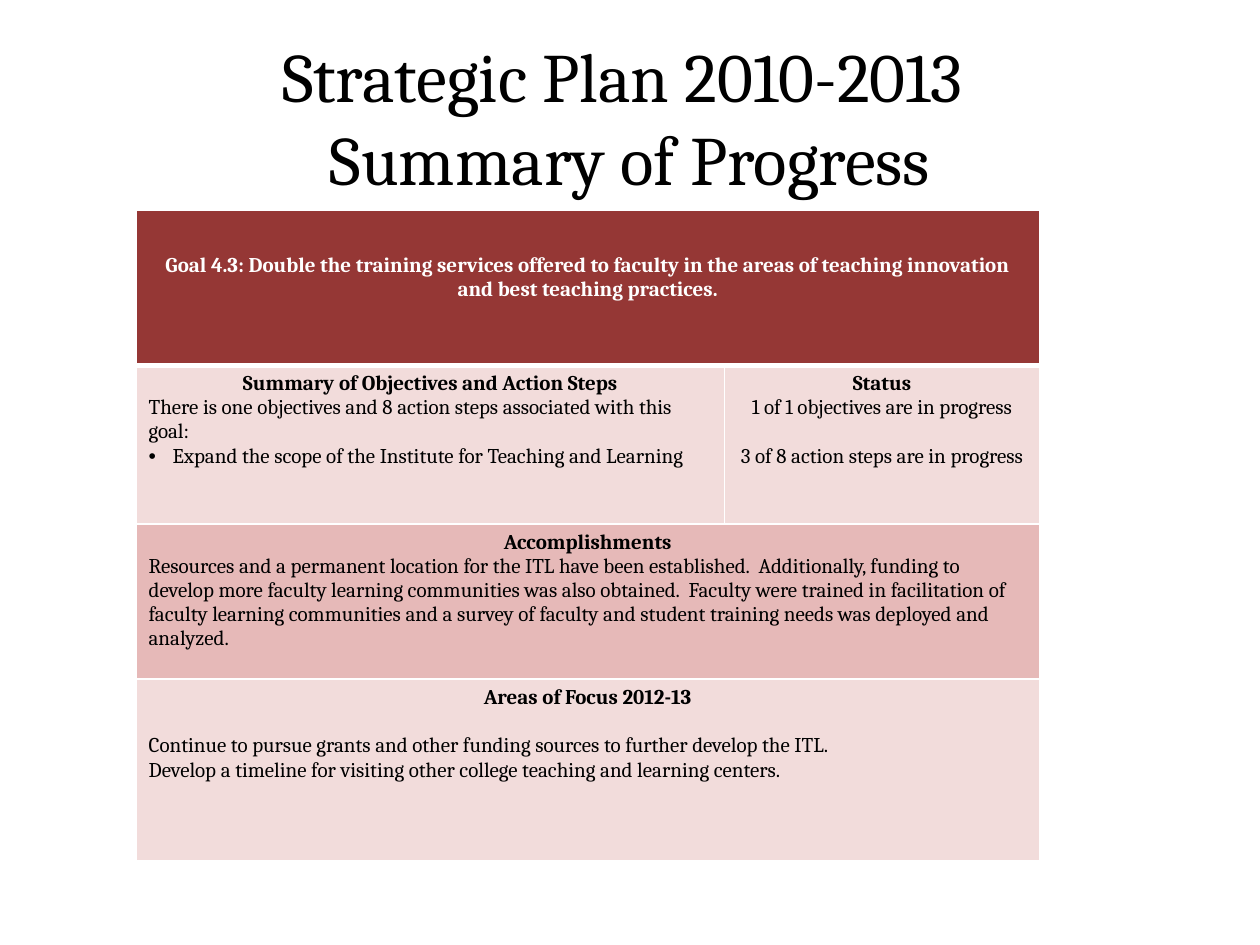
from dataclasses import dataclass

from lxml.etree import SubElement
from pptx import Presentation
from pptx.dml.color import RGBColor
from pptx.enum.text import MSO_ANCHOR, MSO_AUTO_SIZE, PP_ALIGN
from pptx.oxml import parse_xml
from pptx.oxml.ns import nsdecls, qn
from pptx.util import Inches, Pt


@dataclass(frozen=True)
class Theme:
    font: str = "Cambria"
    title_size: float = 39.6
    body_size: float = 12
    gap: float = 14
    ink: str = "000000"
    white: str = "FFFFFF"
    goal: str = "953735"
    pale: str = "F2DCDB"
    rose: str = "E6B9B8"
    rule: float = 1
    goal_rule: float = 3


@dataclass(frozen=True)
class Line:
    text: str
    heading: bool = False
    centered: bool = False
    bullet: bool = False
    gap: bool = False


@dataclass(frozen=True)
class Panel:
    row: int
    column: int
    span: int
    fill: str
    lines: tuple[Line, ...]
    ink: str = "000000"
    top_margin: float = 0.05
    bottom_rule: float = 1


THEME = Theme()
COLUMNS = (4.67, 2.5)
ROWS = (1.23, 1.26, 1.23, 1.44)
BULLET_INDENT = 0.19


def heading(text: str) -> Line:
    return Line(text, heading=True, centered=True)


PANELS = (
    Panel(0, 0, 2, THEME.goal, (
        heading("Goal 4.3: Double the training services offered to faculty in the areas "
                "of teaching innovation and best teaching practices."),
    ), ink=THEME.white, top_margin=0.34, bottom_rule=THEME.goal_rule),
    Panel(1, 0, 1, THEME.pale, (
        heading("Summary of Objectives and Action Steps"),
        Line("There is one objectives and 8 action steps associated with this goal:"),
        Line("Expand the scope of the Institute for Teaching and Learning", bullet=True),
    )),
    Panel(1, 1, 1, THEME.pale, (
        heading("Status"),
        Line("1 of 1 objectives are in progress", centered=True),
        Line("3 of 8 action steps are in progress", centered=True, gap=True),
    )),
    Panel(2, 0, 2, THEME.rose, (
        heading("Accomplishments"),
        Line("Resources and a permanent location for the ITL have been established.  "
             "Additionally, funding to develop more faculty learning communities was also "
             "obtained.  Faculty were trained in facilitation of faculty learning "
             "communities and a survey of faculty and student training needs was deployed "
             "and analyzed."),
    )),
    Panel(3, 0, 2, THEME.pale, (
        heading("Areas of Focus 2012-13"),
        Line("Continue to pursue grants and other funding sources to further develop "
             "the ITL.", gap=True),
        Line("Develop a timeline for visiting other college teaching and learning centers."),
    )),
)


def apply(target, values: dict) -> None:
    for name, value in values.items():
        setattr(target, name, value)


def format_font(font, size: float, ink: str, bold: bool = False) -> None:
    apply(font, {"name": THEME.font, "size": Pt(size), "bold": bold})
    font.color.rgb = RGBColor.from_string(ink)


def add_bullet(paragraph) -> None:
    properties = paragraph._p.get_or_add_pPr()
    properties.set("marL", str(Inches(BULLET_INDENT)))
    properties.set("indent", str(-Inches(BULLET_INDENT)))
    SubElement(properties, qn("a:buFont")).set("typeface", "Arial")
    SubElement(properties, qn("a:buChar")).set("char", "•")


def write_line(paragraph, line: Line, ink: str) -> None:
    if line.bullet:
        add_bullet(paragraph)
    apply(paragraph, {
        "alignment": PP_ALIGN.CENTER if line.centered else PP_ALIGN.LEFT,
        "space_before": Pt(THEME.gap if line.gap else 0),
    })
    run = paragraph.add_run()
    run.text = line.text
    format_font(run.font, THEME.body_size, ink, line.heading)


def paint_cell(cell, fill: str, top_rule: float, bottom_rule: float) -> None:
    cell.fill.solid()
    cell.fill.fore_color.rgb = RGBColor.from_string(fill)
    widths = {"L": THEME.rule, "R": THEME.rule, "T": top_rule, "B": bottom_rule}
    for position, (side, width) in enumerate(widths.items()):
        edge = parse_xml(
            f'<a:ln{side} {nsdecls("a")} w="{Pt(width)}"><a:solidFill>'
            f'<a:srgbClr val="{THEME.white}"/></a:solidFill></a:ln{side}>')
        cell._tc.get_or_add_tcPr().insert(position, edge)


def draw_panel(table, panel: Panel) -> None:
    cell = table.cell(panel.row, panel.column)
    if panel.span > 1:
        cell.merge(table.cell(panel.row, panel.column + panel.span - 1))
    top_rule = THEME.goal_rule if panel.row == 1 else THEME.rule
    for column in range(panel.column, panel.column + panel.span):
        paint_cell(table.cell(panel.row, column), panel.fill, top_rule, panel.bottom_rule)
    apply(cell, {"margin_top": Inches(panel.top_margin),
                 "vertical_anchor": MSO_ANCHOR.TOP})
    for index, line in enumerate(panel.lines):
        frame = cell.text_frame
        paragraph = frame.add_paragraph() if index else frame.paragraphs[0]
        write_line(paragraph, line, panel.ink)


def draw_title(title, text: str) -> None:
    apply(title, {"left": Inches(0.5), "top": Inches(0.3),
                  "width": Inches(9), "height": Inches(1.25)})
    frame = title.text_frame
    frame.text = text
    apply(frame, {"auto_size": MSO_AUTO_SIZE.NONE, "word_wrap": True,
                  "vertical_anchor": MSO_ANCHOR.MIDDLE})
    paragraph = frame.paragraphs[0]
    paragraph.alignment = PP_ALIGN.CENTER
    for run in paragraph.runs:
        format_font(run.font, THEME.title_size, THEME.ink)


def draw_progress(slide) -> None:
    table = slide.shapes.add_table(
        len(ROWS), len(COLUMNS), Inches(1.08), Inches(1.67),
        Inches(sum(COLUMNS)), Inches(sum(ROWS))).table
    for column, width in zip(table.columns, COLUMNS):
        column.width = Inches(width)
    for row, height in zip(table.rows, ROWS):
        row.height = Inches(height)
    for panel in PANELS:
        draw_panel(table, panel)


def main() -> None:
    deck = Presentation()
    apply(deck, {"slide_width": Inches(10), "slide_height": Inches(7.5)})
    slide = deck.slides.add_slide(deck.slide_layouts[5])
    draw_title(slide.shapes.title, "Strategic Plan 2010-2013 \vSummary of Progress")
    draw_progress(slide)
    deck.save("out.pptx")


if __name__ == "__main__":
    main()
